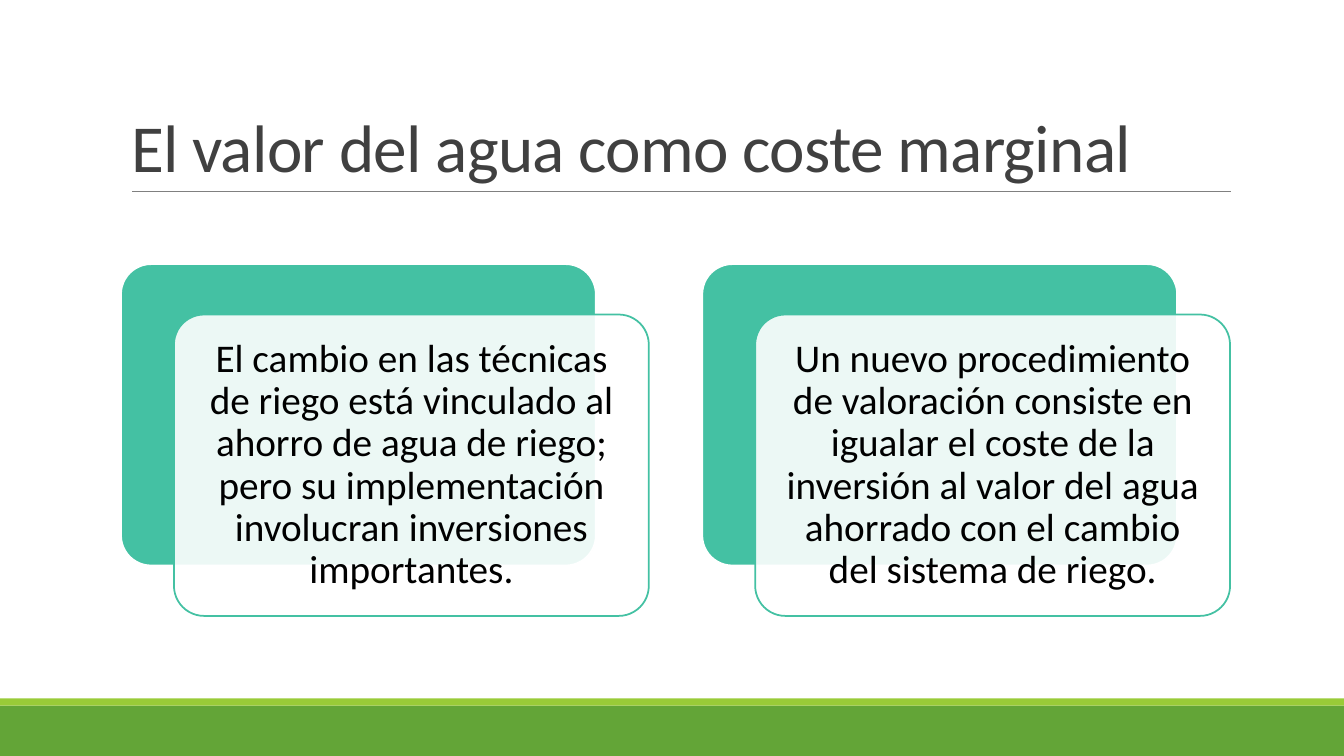
from lxml import etree
from pptx import Presentation
from pptx.dml.color import RGBColor
from pptx.enum.shapes import MSO_CONNECTOR, MSO_SHAPE
from pptx.enum.text import MSO_ANCHOR, MSO_AUTO_SIZE, PP_ALIGN
from pptx.oxml.ns import qn
from pptx.util import Inches, Pt

RECTANGLE = MSO_SHAPE.RECTANGLE
ROUNDED = MSO_SHAPE.ROUNDED_RECTANGLE
STRAIGHT = MSO_CONNECTOR.STRAIGHT
BOTTOM, MIDDLE = MSO_ANCHOR.BOTTOM, MSO_ANCHOR.MIDDLE
LEFT, CENTER = PP_ALIGN.LEFT, PP_ALIGN.CENTER
NO_AUTOFIT = MSO_AUTO_SIZE.NONE

WHITE = RGBColor(0xFF, 0xFF, 0xFF)
BLACK = RGBColor(0x00, 0x00, 0x00)
DARK_GRAY = RGBColor(0x40, 0x40, 0x40)
RULE_GRAY = RGBColor(0x80, 0x80, 0x80)
TEAL = RGBColor(0x44, 0xC1, 0xA3)
GREEN = RGBColor(0x63, 0xA5, 0x37)
LIME = RGBColor(0x99, 0xCB, 0x38)

FONT = "Calibri"
TITLE = "El valor del agua como coste marginal"
CARD_TEXTS = [
    "El cambio en las técnicas de riego está vinculado al ahorro de agua de riego; "
    "pero su implementación involucran inversiones importantes.",
    "Un nuevo procedimiento de valoración consiste en igualar el coste de la "
    "inversión al valor del agua ahorrado con el cambio del sistema de riego.",
]

SLIDE_WIDTH, SLIDE_HEIGHT = 13.33, 7.5
CARD_LEFT, CARD_TOP = 1.2, 2.62
CARD_WIDTH, CARD_HEIGHT = 4.71, 2.99
CARD_STEP = 5.765
OFFSET_X, OFFSET_Y = 0.525, 0.5


def write_text(frame, text, *, size, color, align, anchor, line_spacing, spacing=None):
    frame.word_wrap = True
    frame.auto_size = NO_AUTOFIT
    frame.vertical_anchor = anchor
    paragraph = frame.paragraphs[0]
    paragraph.alignment = align
    paragraph.line_spacing = line_spacing
    paragraph.space_before = Pt(0)
    run = paragraph.add_run()
    run.text = text
    run.font.name = FONT
    run.font.size = Pt(size)
    run.font.color.rgb = color
    if spacing is not None:
        run.font._element.set("spc", str(round(spacing * 100)))


class SlideBuilder:
    def __init__(self, presentation):
        self.slide = presentation.slides.add_slide(presentation.slide_layouts[5])

    def title(self, text, left, top, width, height):
        title = self.slide.shapes.title
        title.left, title.top = Inches(left), Inches(top)
        title.width, title.height = Inches(width), Inches(height)
        write_text(title.text_frame, text, size=48, color=DARK_GRAY, align=LEFT,
                   anchor=BOTTOM, line_spacing=0.85, spacing=-0.5)

    def box(self, kind, left, top, width, height, fill, line=None, opacity=None):
        shape = self.slide.shapes.add_shape(
            kind, Inches(left), Inches(top), Inches(width), Inches(height))
        shape.shadow.inherit = False
        shape.fill.solid()
        shape.fill.fore_color.rgb = fill
        if line is None:
            shape.line.fill.background()
        else:
            shape.line.color.rgb = line
            shape.line.width = Pt(1.25)
        if kind == ROUNDED:
            shape.adjustments[0] = 0.1
        if opacity is not None:
            color = shape._element.spPr.find(qn("a:solidFill")).find(qn("a:srgbClr"))
            etree.SubElement(color, qn("a:alpha")).set("val", str(opacity * 1000))
        return shape

    def rule(self, left, right, top):
        connector = self.slide.shapes.add_connector(
            STRAIGHT, Inches(left), Inches(top), Inches(right), Inches(top))
        connector.line.color.rgb = RULE_GRAY
        connector.line.width = Pt(0.5)
        etree.SubElement(connector._element.spPr, qn("a:effectLst"))

    def card(self, text, left, top):
        self.box(ROUNDED, left, top, CARD_WIDTH, CARD_HEIGHT, TEAL, line=WHITE)
        front = self.box(ROUNDED, left + OFFSET_X, top + OFFSET_Y,
                         CARD_WIDTH, CARD_HEIGHT, WHITE, line=TEAL, opacity=90)
        frame = front.text_frame
        frame.margin_left = frame.margin_right = Inches(0.12)
        frame.margin_top = frame.margin_bottom = Inches(0.12)
        write_text(frame, text, size=28, color=BLACK, align=CENTER,
                   anchor=MIDDLE, line_spacing=0.9)


def main():
    presentation = Presentation()
    presentation.slide_width = Inches(SLIDE_WIDTH)
    presentation.slide_height = Inches(SLIDE_HEIGHT)
    builder = SlideBuilder(presentation)

    # Footer bands
    builder.box(RECTANGLE, 0, 7, SLIDE_WIDTH, 0.5, GREEN)
    builder.box(RECTANGLE, 0, 6.93, SLIDE_WIDTH, 0.07, LIME)

    # Title and rule
    builder.title(TITLE, 1.2, 0.31, 11, 1.59)
    builder.rule(1.31, 12.21, 1.9)

    # Layered cards
    for index, text in enumerate(CARD_TEXTS):
        builder.card(text, CARD_LEFT + index * CARD_STEP, CARD_TOP)

    presentation.save("out.pptx")


if __name__ == "__main__":
    main()
